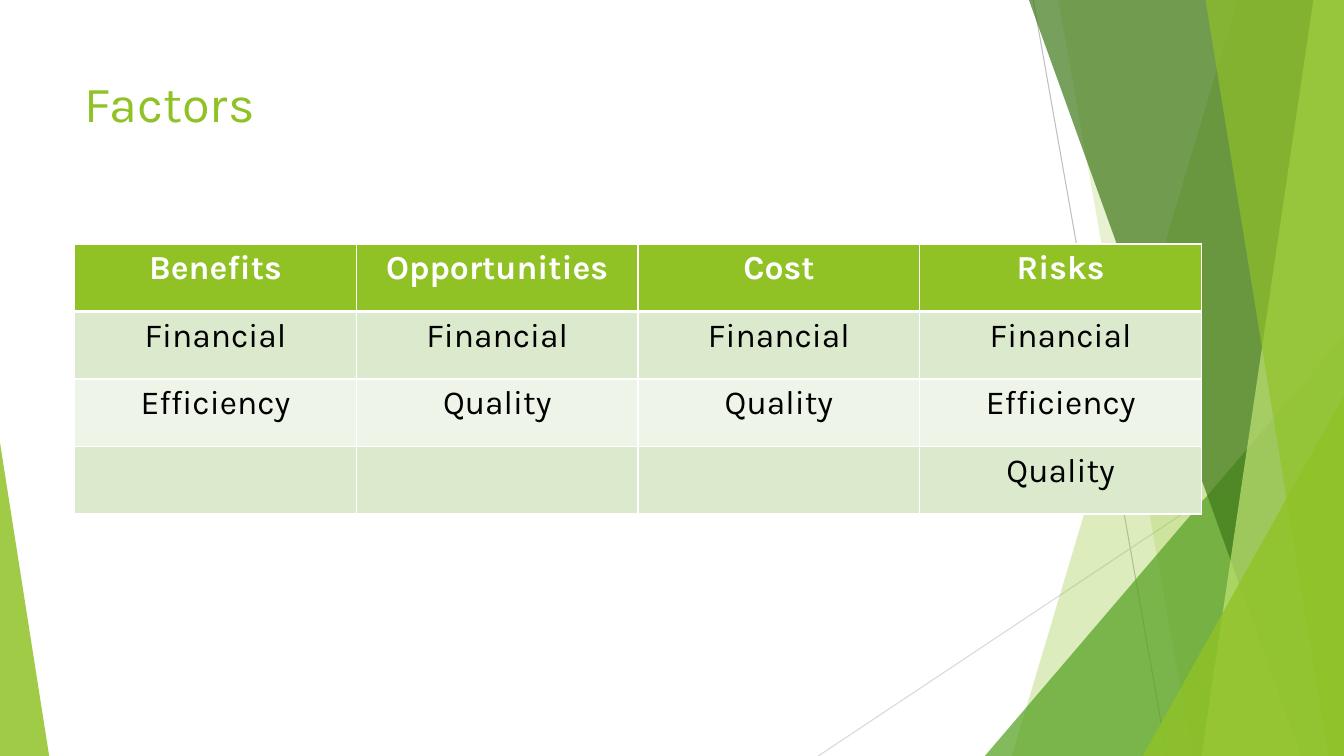
from lxml import etree
from pptx import Presentation
from pptx import util as u
from pptx.dml.color import RGBColor
from pptx.enum import shapes, text
from pptx.oxml.ns import qn

FONT = "Karla"
COLORS = {
    "green": "90C226", "leaf": "54A021", "forest": "3F7819", "lime": "C0E474",
    "band_dark": "DBE9CD", "band_light": "EEF4E8",
    "white": "FFFFFF", "black": "000000",
    "line_dark": "BFBFBF", "line_light": "D9D9D9",
}
TITLE = "Factors"
ROWS = [
    ("Benefits", "Opportunities", "Cost", "Risks"),
    ("Financial", "Financial", "Financial", "Financial"),
    ("Efficiency", "Quality", "Quality", "Efficiency"),
    ("", "", "", "Quality"),
]

# All lengths below are in centimetres
WIDTH, HEIGHT = 33.87, 19.05
LINES = [  # x1, y1, x2, y2, colour
    (26.04, 0, 29.41, HEIGHT, "line_dark"),
    (WIDTH, 10.24, 20.62, HEIGHT, "line_light"),
]
# band: x at top, x at bottom of its left edge; it fills to the right edge
# corner: left, right, top, adjustment of a triangle standing on the bottom edge
FACETS = [  # kind, geometry, colour, opacity in percent
    ("band", (31.19, 25.5), "green", 30),
    ("band", (26.67, 30.05), "green", 20),
    ("corner", (24.82, WIDTH, 8.46, 1), "leaf", 72),
    ("band", (25.93, 32.79), "forest", 70),
    ("band", (33.1, 30.28), "lime", 70),
    ("band", (30.38, 33.48), "green", 65),
    ("corner", (28.8, WIDTH, 9.98, 1), "green", 80),
    ("corner", (0, 1.24, 11.15, 0), "green", 85),
]
TABLE_LEFT, TABLE_TOP, COL_WIDTH, ROW_HEIGHT = 1.88, 6.15, 7.1, 1.7


def rgb(name):
    return RGBColor.from_string(COLORS[name])


def add_line(s, x1, y1, x2, y2, color):
    ends = [u.Cm(v) for v in (x1, y1, x2, y2)]
    line = s.shapes.add_connector(shapes.MSO_CONNECTOR.STRAIGHT, *ends)
    line.line.color.rgb = rgb(color)
    line.line.width = u.Pt(0.75)
    etree.SubElement(line._element.spPr, qn("a:effectLst"))


def add_band(s, x_top, x_bottom):
    start, *rest = [(u.Cm(x), u.Cm(y)) for x, y in (
        (x_top, 0), (WIDTH, 0), (WIDTH, HEIGHT), (x_bottom, HEIGHT))]
    builder = s.shapes.build_freeform(*start)
    builder.add_line_segments(rest, close=True)
    return builder.convert_to_shape()


def add_corner(s, left, right, top, adjustment):
    sp = s.shapes.add_shape(
        shapes.MSO_SHAPE.ISOSCELES_TRIANGLE,
        u.Cm(left), u.Cm(top), u.Cm(right - left), u.Cm(HEIGHT - top))
    sp.adjustments[0] = adjustment
    return sp


def add_facet(s, kind, geometry, color, opacity):
    sp = {"band": add_band, "corner": add_corner}[kind](s, *geometry)
    sp.shadow.inherit = False
    sp.line.fill.background()
    sp.fill.solid()
    sp.fill.fore_color.rgb = rgb(color)
    clr = sp._element.spPr.find(qn("a:solidFill"))[0]
    etree.SubElement(clr, qn("a:alpha"), val=str(opacity * 1000))


def style_run(p, size, color, bold=False):
    for r in p.runs:
        r.font.name, r.font.size, r.font.bold = FONT, u.Pt(size), bold
        r.font.color.rgb = rgb(color)


def add_title(s):
    box = s.shapes.add_textbox(u.Cm(1.88), u.Cm(1.7), u.Cm(23.88), u.Cm(3.66))
    tf = box.text_frame
    tf.word_wrap = True
    tf.vertical_anchor = text.MSO_ANCHOR.TOP
    tf.text = TITLE
    style_run(tf.paragraphs[0], 36, "green")


def set_borders(cell, row):
    """White 1 pt borders, with a 3 pt rule between header and body."""
    widths = {"L": 1, "R": 1, "T": 3 if row == 1 else 1, "B": 3 if row == 0 else 1}
    tc_pr = cell._tc.get_or_add_tcPr()
    for side, width in widths.items():
        ln = etree.SubElement(tc_pr, qn("a:ln" + side), w=str(u.Pt(width)))
        fill = etree.SubElement(ln, qn("a:solidFill"))
        etree.SubElement(fill, qn("a:srgbClr"), val=COLORS["white"])


def add_factor_table(s):
    n_rows, n_cols = len(ROWS), len(ROWS[0])
    table = s.shapes.add_table(
        n_rows, n_cols, u.Cm(TABLE_LEFT), u.Cm(TABLE_TOP),
        u.Cm(COL_WIDTH * n_cols), u.Cm(ROW_HEIGHT * n_rows)).table
    for col in table.columns:
        col.width = u.Cm(COL_WIDTH)
    for i, words in enumerate(ROWS):
        table.rows[i].height = u.Cm(ROW_HEIGHT)
        header = i == 0
        band = "green" if header else "band_dark" if i % 2 else "band_light"
        for j, word in enumerate(words):
            cell = table.cell(i, j)
            set_borders(cell, i)
            cell.fill.solid()
            cell.fill.fore_color.rgb = rgb(band)
            cell.text_frame.text = word
            p = cell.text_frame.paragraphs[0]
            p.alignment = text.PP_ALIGN.CENTER
            style_run(p, 24, "white" if header else "black", header)


def main():
    prs = Presentation()
    prs.slide_width, prs.slide_height = u.Cm(WIDTH), u.Cm(HEIGHT)
    s = prs.slides.add_slide(prs.slide_layouts[6])
    for line in LINES:
        add_line(s, *line)
    for facet in FACETS:
        add_facet(s, *facet)
    add_title(s)
    add_factor_table(s)
    prs.save("out.pptx")


if __name__ == "__main__":
    main()
